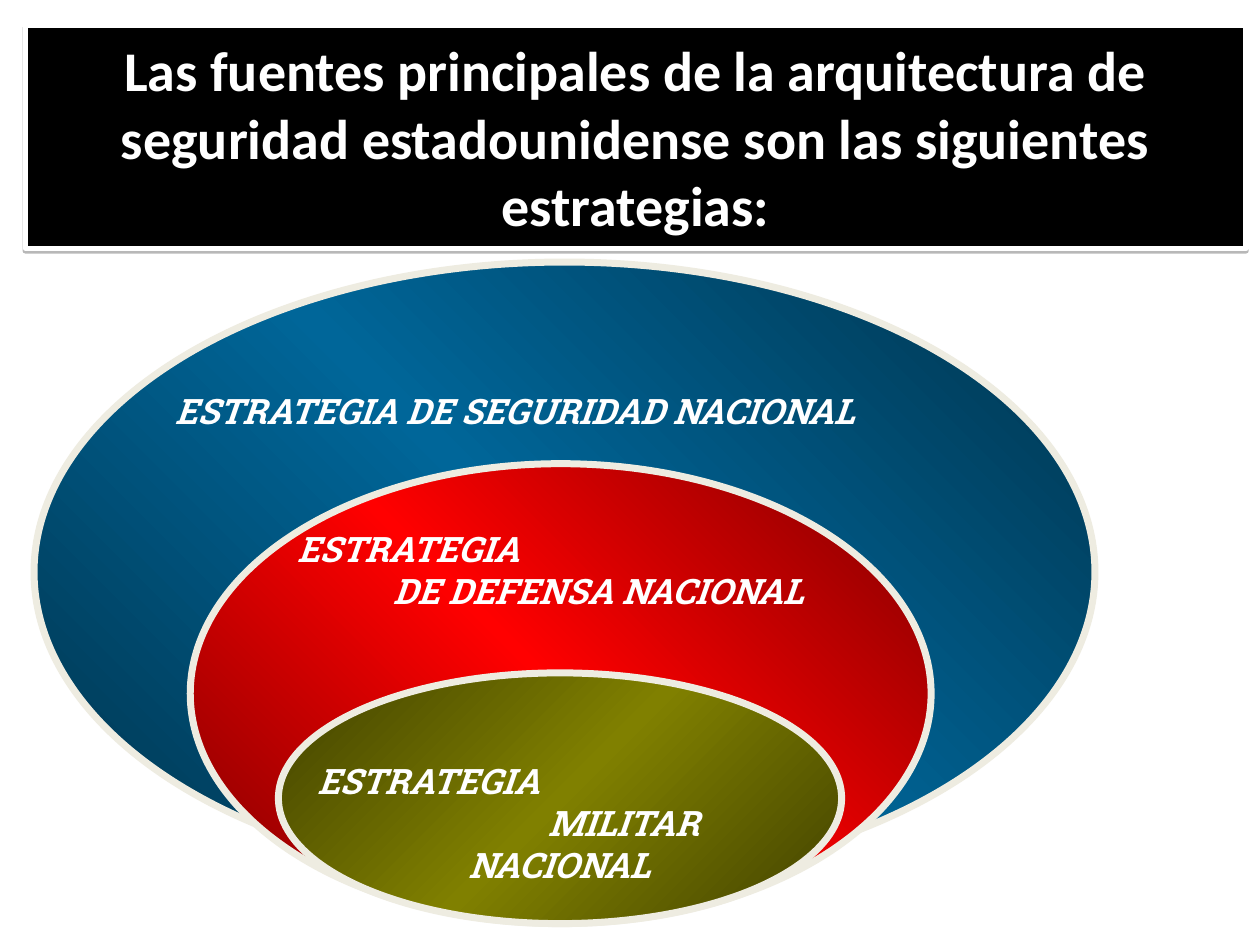
import copy

import pptx
import pptx.dml.color
import pptx.enum.shapes
import pptx.enum.text
import pptx.oxml
import pptx.oxml.ns
import pptx.util

RGBColor = pptx.dml.color.RGBColor
WHITE = RGBColor(0xFF, 0xFF, 0xFF)
BLACK = RGBColor(0x00, 0x00, 0x00)
CREAM = RGBColor(0xEE, 0xEC, 0xE1)
BLUE = RGBColor(0x00, 0x66, 0x99)
DARK_BLUE = RGBColor(0x00, 0x33, 0x4C)
RED = RGBColor(0xFF, 0x00, 0x00)
DARK_RED = RGBColor(0x7F, 0x00, 0x00)
OLIVE = RGBColor(0x80, 0x80, 0x00)
DARK_OLIVE = RGBColor(0x40, 0x40, 0x00)

COLUMNS, ROWS = 100, 75
CELL = pptx.util.Inches(0.1)
TITLE_BOX = (2, 2, 96.9, 17.7)
DIAGRAM_BOX = (2.7, 20.8, 84.2, 52.5)

TITLE_FORMAT = {"name": "Calibri", "size": pptx.util.Pt(32), "bold": True}
LABEL_FORMAT = {"name": "Roboto Slab", "size": pptx.util.Pt(20), "bold": True, "italic": True}

TITLE = ("Las fuentes principales de la arquitectura de seguridad "
         "estadounidense son las siguientes estrategias:")
STRATEGIES = [
    {"oval": (0, 0, 84.2, 49.2), "colors": (DARK_BLUE, BLUE), "angle": 45,
     "label": (10.2, 9.6, 64.9, 4.3),
     "lines": [("ESTRATEGIA DE SEGURIDAD NACIONAL", 0)]},
    {"oval": (12.4, 16, 58.8, 36.5), "colors": (DARK_RED, RED), "angle": 45,
     "label": (19.9, 20.6, 43.1, 7.7),
     "lines": [("ESTRATEGIA", 0), ("DE DEFENSA NACIONAL", 7.6)]},
    {"oval": (19.4, 32.6, 44.7, 19.9), "colors": (DARK_OLIVE, OLIVE), "angle": 315,
     "label": (21.5, 39, 40.6, 7.7),
     "lines": [("ESTRATEGIA", 0), ("MILITAR", 18.3), ("NACIONAL", 12)]},
]

SHADOW = ('<a:effectLst xmlns:a="http://schemas.openxmlformats.org/drawingml/2006/main">'
          '<a:outerShdw blurRad="0" dist="20320" dir="5400000" algn="ctr" rotWithShape="0">'
          '<a:srgbClr val="000000"><a:alpha val="27000"/></a:srgbClr>'
          '</a:outerShdw></a:effectLst>')


def cells(*values):
    return [round(value * CELL) for value in values]


def within(box, part):
    return (box[0] + part[0], box[1] + part[1], part[2], part[3])


def apply_format(font, values):
    for name, value in values.items():
        setattr(font, name, value)
    font.color.rgb = WHITE


def add_outline(shape, color, width):
    shape.line.color.rgb = color
    shape.line.width = pptx.util.Pt(width)


def fill_with_band(shape, edge, middle, angle):
    fill = shape.fill
    fill.gradient()
    fill.gradient_angle = angle
    for stop in fill.gradient_stops:
        stop.color.rgb = edge
    stops = shape.element.spPr.find(".//" + pptx.oxml.ns.qn("a:gsLst"))
    stops.insert(1, copy.deepcopy(stops[0]))
    center = fill.gradient_stops[1]
    center.position = 0.5
    center.color.rgb = middle


def add_title(slide, box):
    banner = slide.shapes.add_shape(
        pptx.enum.shapes.MSO_SHAPE.RECTANGLE, *cells(*box))
    banner.fill.solid()
    banner.fill.fore_color.rgb = BLACK
    add_outline(banner, WHITE, 3)
    banner.element.spPr.append(pptx.oxml.parse_xml(SHADOW))
    banner.text_frame.word_wrap = True
    paragraph = banner.text_frame.paragraphs[0]
    paragraph.alignment = pptx.enum.text.PP_ALIGN.CENTER
    run = paragraph.add_run()
    run.text = TITLE
    apply_format(run.font, TITLE_FORMAT)


def add_label(slide, box, lines):
    frame = slide.shapes.add_textbox(*cells(*box)).text_frame
    frame.word_wrap = True
    for index, (text, indent) in enumerate(lines):
        paragraph = frame.add_paragraph() if index else frame.paragraphs[0]
        properties = paragraph._p.get_or_add_pPr()
        properties.set("marL", str(cells(indent)[0]))
        run = paragraph.add_run()
        run.text = text
        apply_format(run.font, LABEL_FORMAT)


def add_diagram(slide, box):
    for strategy in STRATEGIES:
        oval = slide.shapes.add_shape(
            pptx.enum.shapes.MSO_SHAPE.OVAL, *cells(*within(box, strategy["oval"])))
        oval.shadow.inherit = False
        fill_with_band(oval, *strategy["colors"], strategy["angle"])
        add_outline(oval, CREAM, 4)
        add_label(slide, within(box, strategy["label"]), strategy["lines"])


def main():
    presentation = pptx.Presentation()
    presentation.slide_width, presentation.slide_height = cells(COLUMNS, ROWS)
    slide = presentation.slides.add_slide(presentation.slide_layouts[6])
    add_diagram(slide, DIAGRAM_BOX)
    add_title(slide, TITLE_BOX)
    presentation.save("out.pptx")


if __name__ == "__main__":
    main()
